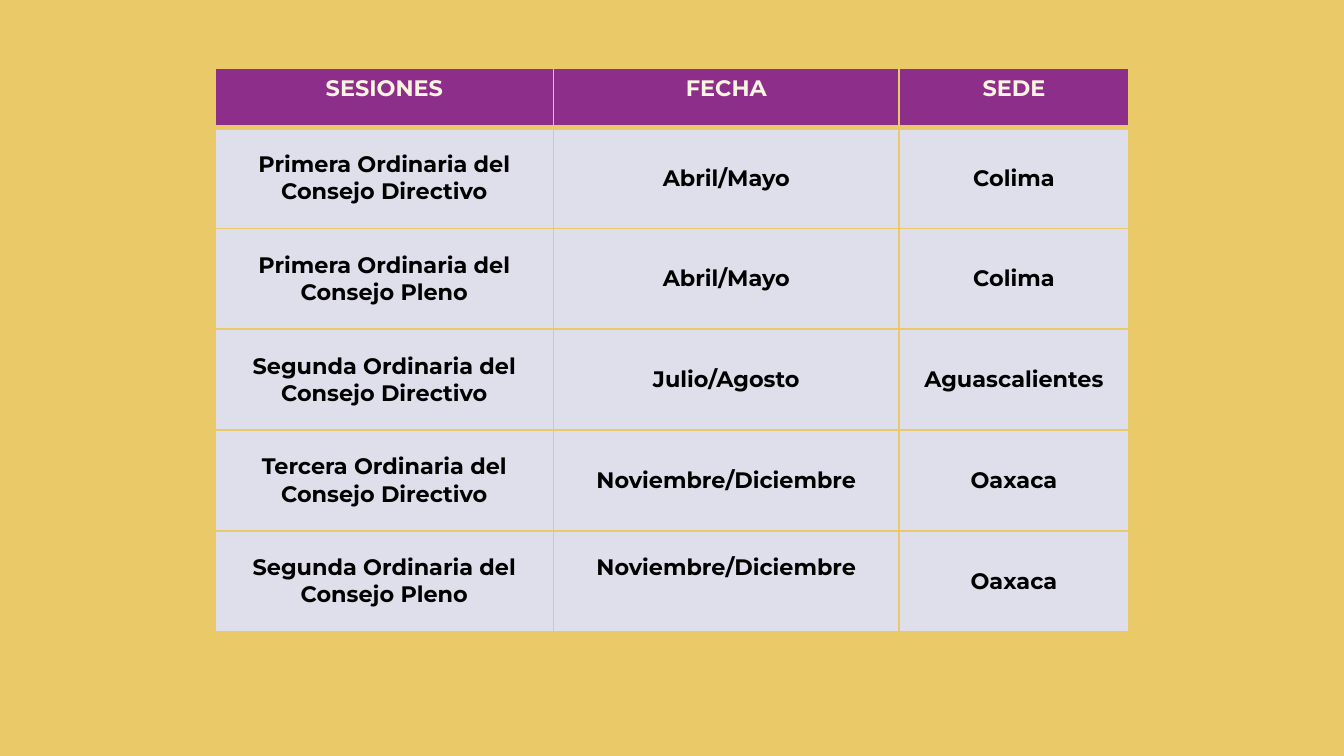
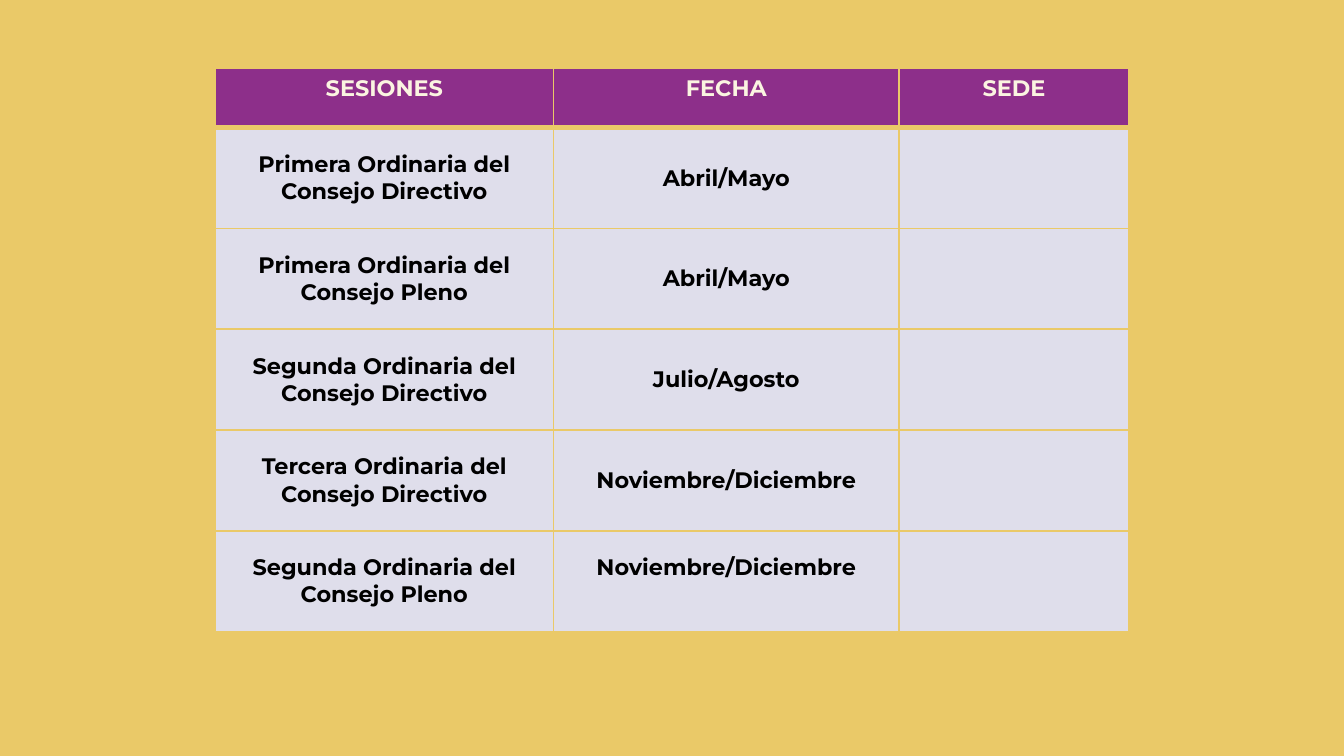
"""Build two slides with the session calendar, with and without venues."""
from dataclasses import dataclass

import lxml.etree
import pptx
import pptx.dml.color
import pptx.enum.text
import pptx.oxml.ns
import pptx.presentation
import pptx.table
import pptx.util
from pptx.util import Inches

COLORS = {
    "background": "EAC968",
    "header": "8D2F8A",
    "header_text": "FBF4E1",
    "body": "DFDEEB",
    "body_text": "000000",
}
FONT = "Montserrat"
HEADINGS = ("SESIONES", "FECHA", "SEDE")
COLUMN_WIDTHS = (2.52, 2.57, 1.71)
HEADER_HEIGHT, SESSION_HEIGHT = 0.44, 0.75
TABLE_LEFT, TABLE_TOP = 1.6, 0.51
THIN_RULE, HEADER_RULE = 1, 3
RAISED_MARGIN = 0.25


@dataclass(frozen=True)
class Session:
    name: str
    date: str
    venue: str
    raised_date: bool = False


SESSIONS = (
    Session("Primera Ordinaria del Consejo Directivo", "Abril/Mayo", "Colima"),
    Session("Primera Ordinaria del Consejo Pleno", "Abril/Mayo", "Colima"),
    Session("Segunda Ordinaria del Consejo Directivo", "Julio/Agosto", "Aguascalientes"),
    Session("Tercera Ordinaria del Consejo Directivo", "Noviembre/Diciembre", "Oaxaca"),
    Session("Segunda Ordinaria del Consejo Pleno", "Noviembre/Diciembre", "Oaxaca", True),
)


def rgb(name: str) -> pptx.dml.color.RGBColor:
    return pptx.dml.color.RGBColor.from_string(COLORS[name])


def write_text(cell: pptx.table._Cell, text: str, *, color: str,
               size: float = 12, bold: bool = True) -> None:
    paragraph = cell.text_frame.paragraphs[0]
    paragraph.alignment = pptx.enum.text.PP_ALIGN.CENTER
    if not text:
        return
    run = paragraph.add_run()
    run.text = text
    run.font.name = FONT
    run.font.size = pptx.util.Pt(size)
    run.font.bold = bold
    run.font.color.rgb = rgb(color)


def set_borders(cell: pptx.table._Cell, *, top: float, bottom: float) -> None:
    qn = pptx.oxml.ns.qn
    properties = cell._tc.get_or_add_tcPr()
    widths = {"lnL": THIN_RULE, "lnR": THIN_RULE, "lnT": top, "lnB": bottom}
    for position, (side, width) in enumerate(widths.items()):
        line = lxml.etree.Element(qn(f"a:{side}"), w=str(pptx.util.Pt(width)))
        fill = lxml.etree.SubElement(line, qn("a:solidFill"))
        lxml.etree.SubElement(fill, qn("a:srgbClr"), val=COLORS["background"])
        properties.insert(position, line)


def fill_row(table: pptx.table.Table, row: int, texts: tuple[str, ...], style: str,
             anchor: pptx.enum.text.MSO_ANCHOR) -> None:
    for column, text in enumerate(texts):
        cell = table.cell(row, column)
        cell.vertical_anchor = anchor
        cell.fill.solid()
        cell.fill.fore_color.rgb = rgb(style)
        set_borders(cell, top=HEADER_RULE if row == 1 else THIN_RULE,
                    bottom=HEADER_RULE if row == 0 else THIN_RULE)
        write_text(cell, text, color=f"{style}_text")


def add_calendar(deck: pptx.presentation.Presentation, *, show_venues: bool) -> None:
    slide = deck.slides.add_slide(deck.slide_layouts[6])
    slide.background.fill.solid()
    slide.background.fill.fore_color.rgb = rgb("background")
    heights = (HEADER_HEIGHT,) + (SESSION_HEIGHT,) * len(SESSIONS)
    calendar = slide.shapes.add_table(
        len(heights), len(HEADINGS), Inches(TABLE_LEFT), Inches(TABLE_TOP),
        Inches(sum(COLUMN_WIDTHS)), Inches(sum(heights))).table
    calendar.horz_banding = False
    for column, width in zip(calendar.columns, COLUMN_WIDTHS):
        column.width = Inches(width)
    for row, height in zip(calendar.rows, heights):
        row.height = Inches(height)
    fill_row(calendar, 0, HEADINGS, "header", pptx.enum.text.MSO_ANCHOR.TOP)
    for index, session in enumerate(SESSIONS, start=1):
        venue = session.venue if show_venues else ""
        fill_row(calendar, index, (session.name, session.date, venue), "body",
                 pptx.enum.text.MSO_ANCHOR.MIDDLE)
        if session.raised_date:
            calendar.cell(index, 1).margin_bottom = Inches(RAISED_MARGIN)


def main() -> None:
    deck = pptx.Presentation()
    deck.slide_width = Inches(10)
    deck.slide_height = deck.slide_width * 9 // 16
    for show_venues in (True, False):
        add_calendar(deck, show_venues=show_venues)
    deck.save("out.pptx")


if __name__ == "__main__":
    main()
